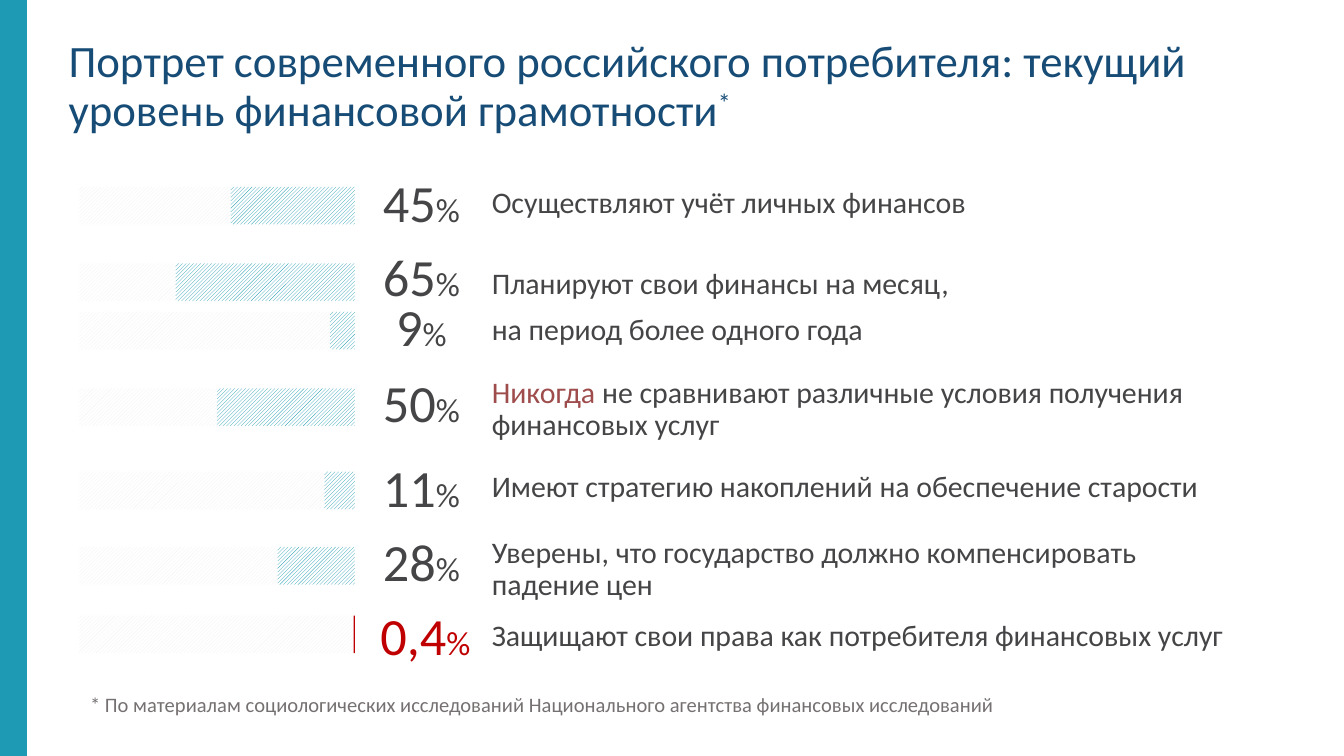
"""Build a slide of bar indicators on the financial literacy of consumers."""
from dataclasses import dataclass

from pptx import Presentation
from pptx.dml.color import RGBColor
from pptx.enum.dml import MSO_PATTERN
from pptx.enum.shapes import MSO_SHAPE
from pptx.enum.text import MSO_ANCHOR, MSO_AUTO_SIZE, PP_ALIGN
from pptx.util import Inches, Pt


@dataclass(frozen=True)
class Theme:
    font: str = "Calibri"
    heading: str = "164C76"
    text: str = "454547"
    muted: str = "767171"
    accent: str = "1E9AB4"
    track: str = "F2F2F2"
    paper: str = "FFFFFF"
    warning: str = "9E4C4C"
    alarm: str = "C00000"
    title_size: int = 24
    number_size: int = 28
    percent_size: int = 18
    label_size: int = 16
    note_size: int = 11


THEME = Theme()
TITLE = "Портрет современного российского потребителя: текущий уровень финансовой грамотности"
FOOTNOTE = "* По материалам социологических исследований Национального агентства финансовых исследований"

# percent, bar top, track width, number (left, top), label (top, width, height), label runs
INDICATORS = [
    (45, 1.39, 1.91, (2.76, 1.32), (1.4, 3.86, 0.28),
     [("Осуществляют учёт личных финансов", THEME.text)]),
    (65, 1.96, 1.91, (2.76, 1.87), (2, 3.86, 0.28),
     [("Планируют свои финансы на месяц,", THEME.text)]),
    (9, 2.32, 1.91, (2.76, 2.24), (2.34, 3.86, 0.39),
     [("на период более одного года", THEME.text)]),
    (50, 2.89, 1.03, (2.76, 2.81), (2.81, 5.43, 0.43),
     [("Никогда ", THEME.warning),
      ("не сравнивают различные условия получения финансовых услуг", THEME.text)]),
    (11, 3.51, 1.98, (2.76, 3.44), (3.51, 5.28, 0.29),
     [("Имеют стратегию накоплений на обеспечение старости", THEME.text)]),
    (28, 4.07, 1.98, (2.76, 3.99), (4, 4.96, 0.47),
     [("Уверены, что государство должно компенсировать падение цен", THEME.text)]),
    (0.4, 4.58, 2.04, (2.79, 4.54), (4.62, 5.67, 0.35),
     [("Защищают свои права как потребителя финансовых услуг", THEME.text)]),
]

SLIDE_W = 10
SLIDE_H = SLIDE_W * 9 / 16
BAR_LEFT, BAR_RIGHT, BAR_H = 0.59, 2.64, 0.28
NUMBER_W, NUMBER_H = 0.75, 0.47
LABEL_LEFT = 3.66


def write(box, runs, align=PP_ALIGN.LEFT):
    frame = box.text_frame
    frame.word_wrap = True
    frame.auto_size = MSO_AUTO_SIZE.NONE
    frame.vertical_anchor = MSO_ANCHOR.TOP
    frame.margin_left = frame.margin_right = frame.margin_top = frame.margin_bottom = 0
    paragraph = frame.paragraphs[0]
    paragraph.alignment = align
    paragraph.line_spacing = 0.9
    paragraph.space_before = Pt(0)
    paragraph.font.name = THEME.font
    for words, size, color in runs:
        run = paragraph.add_run()
        run.text = words
        run.font.size = Pt(size)
        run.font.color.rgb = RGBColor.from_string(color)
    return paragraph


def add_text(slide, left, top, width, height, runs, align=PP_ALIGN.LEFT):
    box = slide.shapes.add_textbox(*map(Inches, (left, top, width, height)))
    write(box, runs, align)


def add_bar(slide, left, top, width, height, color, hatched=True):
    bar = slide.shapes.add_shape(MSO_SHAPE.RECTANGLE, *map(Inches, (left, top, width, height)))
    bar.shadow.inherit = False
    bar.line.fill.background()
    if hatched:
        bar.fill.patterned()
        bar.fill.pattern = MSO_PATTERN.DARK_UPWARD_DIAGONAL
        bar.fill.fore_color.rgb = RGBColor.from_string(color)
        bar.fill.back_color.rgb = RGBColor.from_string(THEME.paper)
    else:
        bar.fill.solid()
        bar.fill.fore_color.rgb = RGBColor.from_string(color)


def add_title(slide):
    title = slide.shapes.title
    title.left, title.top, title.width, title.height = map(Inches, (0.51, 0.29, 8.98, 0.87))
    paragraph = write(title, [(words, THEME.title_size, THEME.heading) for words in (TITLE, "*")])
    paragraph.runs[-1].font._element.set("baseline", "30000")


def add_indicator(slide, percent, bar_top, track_width, number_at, label_at, label):
    alarming = percent < 1
    bar_width = (BAR_RIGHT - BAR_LEFT) * percent / 100
    add_bar(slide, BAR_LEFT, bar_top, track_width, BAR_H, THEME.track)
    add_bar(slide, BAR_RIGHT - bar_width, bar_top, bar_width, BAR_H,
            THEME.alarm if alarming else THEME.accent, hatched=not alarming)
    color = THEME.alarm if alarming else THEME.text
    number = [(str(percent).replace(".", ","), THEME.number_size, color),
              ("%", THEME.percent_size, color)]
    add_text(slide, *number_at, NUMBER_W, NUMBER_H, number, PP_ALIGN.CENTER)
    add_text(slide, LABEL_LEFT, *label_at,
             [(words, THEME.label_size, shade) for words, shade in label])


def main():
    deck = Presentation()
    deck.slide_width, deck.slide_height = Inches(SLIDE_W), Inches(SLIDE_H)
    slide = deck.slides.add_slide(deck.slide_layouts[5])
    add_title(slide)
    add_bar(slide, 0, 0, 0.2, SLIDE_H, THEME.accent, hatched=False)
    for indicator in INDICATORS:
        add_indicator(slide, *indicator)
    add_text(slide, 0.67, 5.17, 8.19, 0.28, [(FOOTNOTE, THEME.note_size, THEME.muted)])
    deck.save("out.pptx")


if __name__ == "__main__":
    main()
